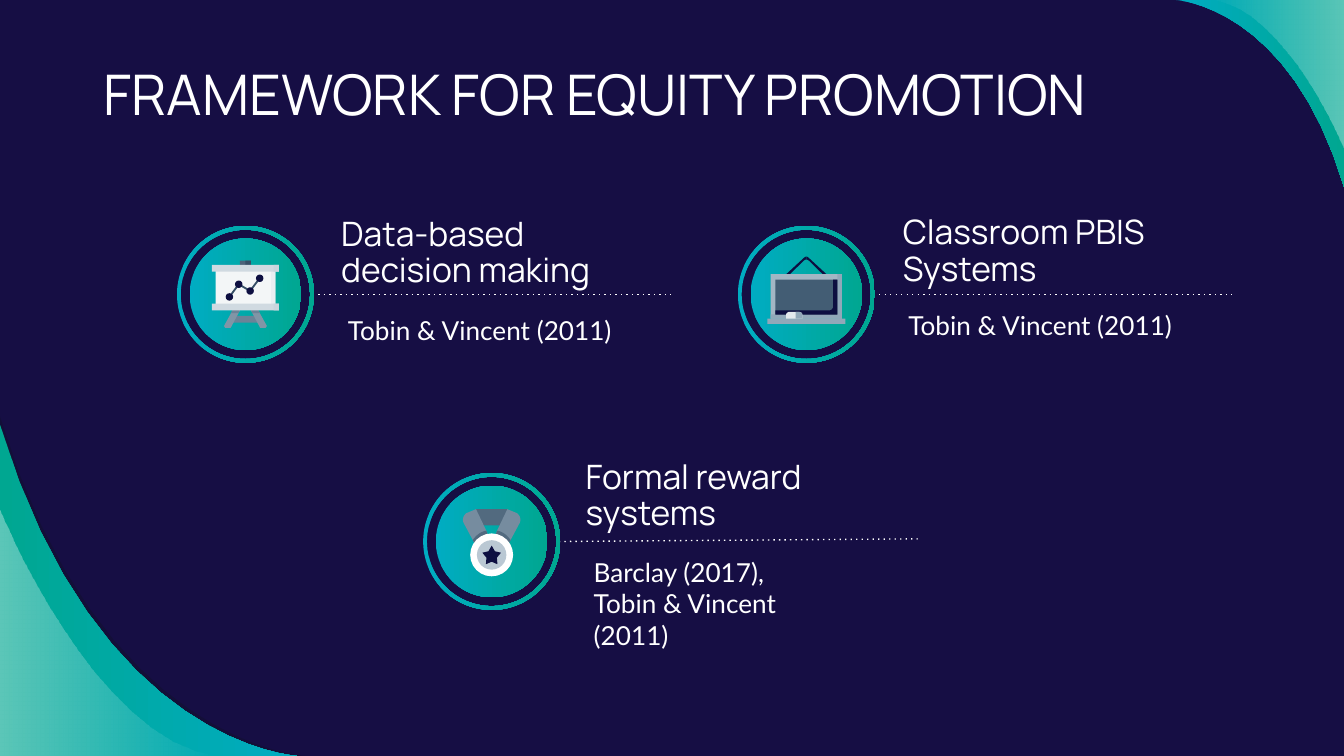
from lxml.etree import SubElement
from pptx import Presentation
from pptx.dml.color import RGBColor
from pptx.enum.shapes import MSO_CONNECTOR as Connector, MSO_SHAPE as Shape
from pptx.enum.text import MSO_ANCHOR as Anchor, MSO_AUTO_SIZE as AutoSize, PP_ALIGN as Align
from pptx.oxml.ns import qn
from pptx.util import Pt

WHITE, NAVY, INK = "FFFFFF", "160E44", "0D0F41"
TEAL = [("00ACC2", 100), ("00A791", 100)]
SHEEN = [(WHITE, 0), (WHITE, 36)]
RING, DISC = 73.4, 59.8
HEADING = {"font": "Manrope", "size": 18, "spacing": 0.9, "anchor": Anchor.MIDDLE}
CITATION = {"font": "Lato", "size": 14, "spacing": 1, "anchor": Anchor.TOP}
TITLE = {"font": "Manrope", "size": 30, "spacing": 0.95, "anchor": Anchor.TOP}


def rgb(value):
    """Turn a hex string into a colour."""
    return RGBColor.from_string(value)


def paint(shape, stops):
    """Fill a shape with one (colour, opacity) stop or a left-to-right gradient of two."""
    shape.shadow.inherit = False
    shape.line.fill.background()
    if len(stops) == 1:
        shape.fill.solid()
        shape.fill.fore_color.rgb = rgb(stops[0][0])
    else:
        shape.fill.gradient()
        shape.fill.gradient_angle = 0
        for stop, (value, _) in zip(shape.fill.gradient_stops, stops):
            stop.color.rgb = rgb(value)
    for node, (_, opacity) in zip(shape.element.spPr.iter(qn("a:srgbClr")), stops):
        if opacity < 100:
            SubElement(node, qn("a:alpha"), val=str(opacity * 1000))


def flatten(steps, count=16):
    """Turn points and six-number Bezier steps into plain points."""
    points = [steps[0]]
    for step in steps[1:]:
        if len(step) == 2:
            points.append(step)
            continue
        knots = [points[-1], step[:2], step[2:4], step[4:]]
        for index in range(1, count + 1):
            t = index / count
            weights = ((1 - t) ** 3, 3 * t * (1 - t) ** 2, 3 * t * t * (1 - t), t ** 3)
            points.append(tuple(sum(w * k[axis] for w, k in zip(weights, knots)) for axis in (0, 1)))
    return points


def add_outline(page, steps, stops, centre=(0, 0), flip=1):
    """Draw a closed outline around a centre, mirrored when flip is -1."""
    points = [(Pt(centre[0] + flip * x), Pt(centre[1] + y)) for x, y in flatten(steps)]
    builder = page.shapes.build_freeform(*points[0], scale=1.0)
    builder.add_line_segments(points[1:], close=True)
    paint(builder.convert_to_shape(), stops)


def add_preset(page, kind, centre, box, stops):
    """Draw a preset shape from left, top, right and bottom offsets to a centre."""
    left, top, right, bottom = box
    shape = page.shapes.add_shape(
        kind, Pt(centre[0] + left), Pt(centre[1] + top), Pt(right - left), Pt(bottom - top))
    paint(shape, stops)
    return shape


def add_round(page, kind, centre, size, stops):
    """Draw a circular preset shape about its centre."""
    half = size / 2
    return add_preset(page, kind, centre, (-half, -half, half, half), stops)


def add_line(page, start, end, value, width, dash="solid"):
    """Draw a straight line with a dash style."""
    line = page.shapes.add_connector(Connector.STRAIGHT, *map(Pt, start + end))
    line.line.color.rgb = rgb(value)
    line.line.width = Pt(width)
    properties = line.element.spPr
    SubElement(properties.find(qn("a:ln")), qn("a:prstDash"), val=dash)
    SubElement(properties, qn("a:effectLst"))


def write(box, place, lines, style):
    """Place a text box or placeholder and write formatted paragraphs."""
    for name, value in zip(("left", "top", "width", "height"), place):
        setattr(box, name, Pt(value))
    frame = box.text_frame
    frame.text = "\n".join(lines)
    settings = {"word_wrap": True, "auto_size": AutoSize.NONE, "vertical_anchor": style["anchor"]}
    settings.update({f"margin_{side}": Pt(7.2) for side in ("left", "top", "right", "bottom")})
    for name, value in settings.items():
        setattr(frame, name, value)
    for para in frame.paragraphs:
        para.alignment = Align.LEFT
        para.line_spacing = style["spacing"]
        for name, value in {"name": style["font"], "size": Pt(style["size"])}.items():
            setattr(para.font, name, value)
        para.font.color.rgb = rgb(WHITE)


def add_text(page, place, lines, style):
    """Add a text box."""
    write(page.shapes.add_textbox(0, 0, 0, 0), place, lines, style)


def add_corners(page):
    """Draw the curved corner bands."""
    add_outline(page, [(0, 223.2), (52.6, 398.9, 163.4, 405, 163.4, 405), (0, 405)], [("12102F", 54)])
    add_outline(page, [(159.1, 405), (159.1, 405, 51.8, 399.6, 0, 227.5), (0, 405)], TEAL[::-1])
    add_outline(page, [(0, 273.6), (0, 273.6, 49.7, 397, 116.6, 405), (0, 405)], SHEEN[::-1])
    add_outline(page, [(630, 0), (630, 0, 691.2, 2.9, 720, 100.1), (720, 0)], TEAL)
    add_outline(page, [(720, 80.6), (720, 80.6, 689.8, 5, 648.7, 0), (720, 0)], SHEEN)


def add_bars(page, centre, bars):
    """Draw flat rectangles, each a colour and a box."""
    for value, box in bars:
        add_preset(page, Shape.RECTANGLE, centre, box, [(value, 100)])


def add_pair(page, centre, parts):
    """Draw each outline together with its mirror image."""
    for value, steps in parts:
        for flip in (1, -1):
            add_outline(page, steps, [(value, 100)], centre, flip)


def add_easel(page, centre):
    """Draw a flip chart with a line graph."""
    add_bars(page, centre, [
        ("4B637A", (-3, -18, 3, -15)), ("364F67", (0, -18, 3, -15)),
        ("F3F6F7", (-16, -13, 16, 6.5)), ("E9EEF1", (13.7, -13, 16, 6.5)),
        ("D0DAE1", (-18, -15.8, 18, -12.2)), ("CAD5DD", (15.1, -15.8, 18, -12.2))])
    add_outline(page, [(-5.8, 11.5), (-7.4, 15.1), (7.4, 15.1), (5.8, 11.5)], [("6B8397", 100)], centre)
    add_pair(page, centre, [
        ("8195A6", [(-6.5, 7.9), (-11.5, 17), (-10.8, 18), (-7.9, 18), (-2.9, 8.6), (-3.2, 7.9)]),
        ("6B8397", [(-6.5, 7.9), (-7.9, 10.1), (-3.6, 10.1), (-2.9, 7.9)])])
    add_bars(page, centre, [("D0DAE1", (-18, 5, 18, 8.6)), ("CAD5DD", (15.1, 5, 18, 8.6))])
    dots = [(centre[0] + x, centre[1] + y) for x, y in ((-8.6, 1.4), (-3.6, -5.4), (2.5, -1.8), (7.6, -8.6))]
    for start, end in zip(dots, dots[1:]):
        add_line(page, start, end, "364F67", 1)
    for dot in dots:
        add_round(page, Shape.OVAL, dot, 4, [(INK, 100)])


def add_board(page, centre):
    """Draw a hanging chalkboard."""
    add_pair(page, centre, [(INK, [
        (0, -20.2), (-0.7, -20.2, -1.4, -19.4, -2.2, -18.7), (-11.5, -10.1), (-10.4, -9.2),
        (-1.4, -18), (-0.9, -18.5, -0.5, -18.6, 0, -18.6)])])
    add_bars(page, centre, [("91A8B9", (-20.9, 13, 20.9, 15.8)), ("A3B6C4", (-19.1, -10.8, 19.1, 13)),
                            ("91A8B9", (16.6, -10.8, 19.1, 13)), ("91A8B9", (-19.1, 10.8, 19.1, 13)),
                            ("435D74", (-16.6, -7.9, 16.6, 10.8))])
    add_outline(page, [(14.4, -7.9), (14.4, 6.5), (14.4, 7.2, 13.7, 8.6, 12.2, 8.6), (-16.6, 8.6),
                       (-16.6, 10.8), (16.6, 10.8), (16.6, -7.9)], [(INK, 100)], centre)
    for value, left in (("E3E9ED", -9.4), ("91A8B9", -5.8)):
        start = left - 1.4 if left < -6 else left
        add_outline(page, [(left, 9.4), (left, 9.4, start, 9.8, start, 10.8), (start, 13), (-2.2, 13),
                           (-2.2, 10.8), (-2.2, 10, -2.9, 9.4, -4.3, 9.4)], [(value, 100)], centre)


def add_medal(page, centre):
    """Draw a medal on a ribbon."""
    add_outline(page, [(-8.4, -17.3), (-9.4, -8.6), (9.4, -8.6), (8.4, -17.3)], [("526A7F", 100)], centre)
    add_pair(page, centre, [
        ("768C9F", [(-8.4, -17.3), (-13.7, -15.1), (-15.1, -13.7, -15.8, -12.2, -15.1, -10.1),
                    (-10.1, -0.7), (-8.6, 2.2), (-1.4, -1.4), (-2.9, -5.8)]),
        ("526A7F", [(-2.9, -5.8), (-6.5, -5, -8.6, -2.9, -10.1, -0.7), (-8.6, 2.2), (-1.4, -1.4)])])
    middle = (centre[0], centre[1] + 7.2)
    for size, value in ((23, WHITE), (15.8, "BAC8D3")):
        add_round(page, Shape.OVAL, middle, size, [(value, 100)])
    star = add_round(page, Shape.STAR_5_POINT, middle, 10, [(INK, 100)])
    star.adjustments[0] = 0.28


def add_badge(page, centre, draw_icon, rise=0):
    """Draw a ringed icon with its dotted rule."""
    x, y = centre
    add_line(page, (x + 36, y), (x + 228.2, y - rise), WHITE, 0.75, "dot")
    ring = add_round(page, Shape.DONUT, centre, RING, TEAL)
    ring.adjustments[0] = 0.028
    add_round(page, Shape.OVAL, centre, DISC, TEAL)
    draw_icon(page, centre)


def main():
    """Build and save the slide."""
    deck = Presentation()
    deck.slide_width, deck.slide_height = Pt(720), Pt(405)
    page = deck.slides.add_slide(deck.slide_layouts[5])
    page.background.fill.solid()
    page.background.fill.fore_color.rgb = rgb(NAVY)
    add_corners(page)
    write(page.shapes.title, (48.2, 27.4, 557.3, 49.7), ["FRAMEWORK FOR EQUITY PROMOTION"], TITLE)
    source = "Tobin & Vincent (2011)"
    topics = [
        ((131.5, 157.7), add_easel, 0, "Data-based decision making", (175.7, 118.1, 180, 35.3),
         [source], (179.3, 161.3, 180, 38.2)),
        ((432, 157.7), add_board, 0, "Classroom PBIS Systems", (476.6, 115.9, 211.7, 38.2),
         [source], (479.5, 158.4, 181.4, 60.5)),
        ((263.4, 290.1), add_medal, 1.4, "Formal reward systems", (306.7, 247, 191.5, 38.2),
         ["Barclay (2017),", source], (311, 290.9, 150.5, 43.9))]
    for centre, icon, rise, heading, heading_place, citation, citation_place in topics:
        add_badge(page, centre, icon, rise)
        add_text(page, heading_place, [heading], HEADING)
        add_text(page, citation_place, citation, CITATION)
    deck.save("out.pptx")


if __name__ == "__main__":
    main()
